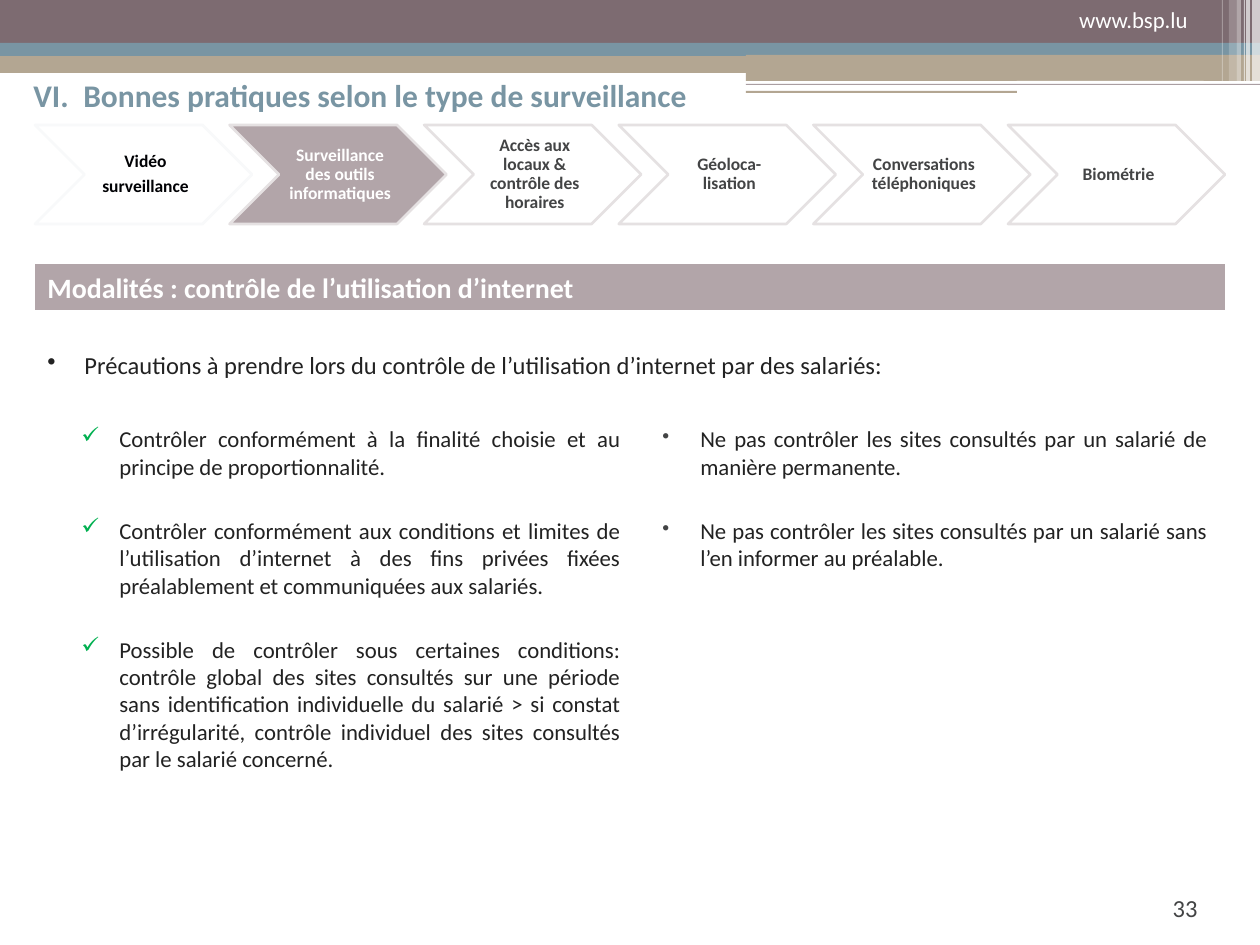
"""Build the slide on precautions when monitoring internet use."""
from lxml.etree import SubElement
from pptx import Presentation
from pptx.dml.color import RGBColor
from pptx.enum.shapes import MSO_SHAPE as Shape
from pptx.enum.text import MSO_ANCHOR as Anchor, PP_ALIGN as Align
from pptx.oxml.ns import qn
from pptx.util import Emu, Pt

SCALE = 914400 / 126
WIDTH, HEIGHT = 1260, 945
COLORS = {
    "plum": "7D6B71", "blue": "7995A3", "tan": "B3A692", "white": "FFFFFF",
    "mauve": "B2A5A9", "pale": "E5E1E2", "faint": "F8F9FA", "black": "000104",
    "gray": "434445", "ink": "222222", "green": "00B050",
}

BANDS = [
    (746, 49, 514, 13, "blue"),
    (0, 54, 907, 19, "tan"),
    (0, 0, WIDTH, 43, "plum"),
    (0, 43, WIDTH, 13, "blue"),
    (746, 55, 514, 26, "tan"),
]
STRIPES = [
    (1252, 8, 86, 65), (1246, 4, 86, 65), (1244, 1, 86, 60),
    (1237, 4, 86, 40), (1229, 8, 81, 20), (1222, 1, 81, 30),
]
STEPS = [
    (["Vidéo", "surveillance"], None, "faint", "black"),
    (["Surveillance des outils informatiques"], "mauve", "pale", "white"),
    (["Accès aux locaux & contrôle des horaires"], None, "pale", "gray"),
    (["Géoloca-lisation"], None, "pale", "gray"),
    (["Conversations téléphoniques"], None, "pale", "gray"),
    (["Biométrie"], None, "pale", "gray"),
]
TITLE = "VI.\tBonnes pratiques selon le type de surveillance"
HEADING = "Modalités : contrôle de l’utilisation d’internet"
INTRO = "Précautions à prendre lors du contrôle de l’utilisation d’internet par des salariés:"
ALLOWED = [
    "Contrôler conformément à la finalité choisie et au principe de proportionnalité.",
    "Contrôler conformément aux conditions et limites de l’utilisation d’internet "
    "à des fins privées fixées préalablement et communiquées aux salariés.",
    "Possible de contrôler sous certaines conditions: contrôle global des sites "
    "consultés sur une période sans identification individuelle du salarié > si constat "
    "d’irrégularité, contrôle individuel des sites consultés par le salarié concerné.",
]
FORBIDDEN = [
    "Ne pas contrôler les sites consultés par un salarié de manière permanente.",
    "Ne pas contrôler les sites consultés par un salarié sans l’en informer au préalable.",
]


def px(value):
    return Emu(round(value * SCALE))


def rgb(name):
    return RGBColor.from_string(COLORS[name])


def add_block(page, at, fill=None, kind=Shape.RECTANGLE, line=None, alpha=None):
    block = page.shapes.add_shape(kind, *map(px, at))
    block.shadow.inherit = False
    if fill:
        block.fill.solid()
        block.fill.fore_color.rgb = rgb(fill)
    else:
        block.fill.background()
    if line:
        block.line.color.rgb = rgb(line)
        block.line.width = Pt(1.5)
    else:
        block.line.fill.background()
    if alpha:
        color = block.fill._xPr.find(qn("a:solidFill"))[0]
        SubElement(color, qn("a:alpha"), val=str(alpha * 1000))
    return block


def add_box(page, at):
    return page.shapes.add_textbox(*map(px, at))


def write(box, texts, size, color, bold=False, align=Align.LEFT, anchor=Anchor.TOP,
          gap=0, spacing=None, bullet=None, bullet_color=None, bullet_size=100,
          indent=(0, 0), tab=None, insets=None):
    frame = box.text_frame
    frame.word_wrap = True
    frame.vertical_anchor = anchor
    if insets:
        (frame.margin_left, frame.margin_top,
         frame.margin_right, frame.margin_bottom) = map(px, insets)
    for index, text in enumerate(texts):
        para = frame.add_paragraph() if index else frame.paragraphs[0]
        props = para._p.get_or_add_pPr()
        if bullet:
            props.set("marL", str(px(indent[0])))
            props.set("indent", str(px(indent[1])))
            tint = SubElement(props, qn("a:buClr"))
            SubElement(tint, qn("a:srgbClr"), val=COLORS[bullet_color or color])
            SubElement(props, qn("a:buSzPct"), val=str(bullet_size * 1000))
            SubElement(props, qn("a:buChar"), char=bullet)
        if tab:
            stops = SubElement(props, qn("a:tabLst"))
            SubElement(stops, qn("a:tab"), pos=str(px(tab)), algn="l")
        para.alignment = align
        if spacing:
            para.line_spacing = spacing
        if index and gap:
            para.space_before = Pt(gap)
        span = para.add_run()
        span.text = text
        span.font.name = "Calibri"
        span.font.size = Pt(size)
        span.font.bold = bold
        span.font.color.rgb = rgb(color)


def add_header(page):
    for *at, fill in BANDS:
        add_block(page, at, fill)
    add_block(page, (1016, 81, 221, 5), "white", kind=Shape.ROUNDED_RECTANGLE)
    for left, width, height, alpha in STRIPES:
        add_block(page, (left, 0, width, height), "white", alpha=alpha)
    add_block(page, (746, 84, 514, 1), "plum", alpha=65)
    add_block(page, (746, 91, 271, 2), "tan")


def add_steps(page, left=35, top=125, total=1190, width=217, height=99):
    pitch = (total - width) / (len(STEPS) - 1)
    for index, (texts, fill, line, color) in enumerate(STEPS):
        at = (left + pitch * index, top, width, height)
        step = add_block(page, at, fill, kind=Shape.CHEVRON, line=line)
        write(step, texts, 10, color, bold=True, align=Align.CENTER,
              anchor=Anchor.MIDDLE, gap=3.5, spacing=0.9, insets=(5, 1, 1, 1))


def main():
    deck = Presentation()
    deck.slide_width, deck.slide_height = px(WIDTH), px(HEIGHT)
    page = deck.slides.add_slide(deck.slide_layouts[6])
    add_header(page)
    write(add_box(page, (1027, 887, 183, 58)), ["33"], 14, "gray", align=Align.RIGHT)
    write(add_box(page, (1017, 0, 183, 63)), ["www.bsp.lu"], 13, "white", align=Align.RIGHT)
    add_steps(page)
    write(add_block(page, (35, 264, 1190, 46), "mauve"), [HEADING], 16, "white",
          bold=True, anchor=Anchor.MIDDLE)
    write(add_box(page, (21, 0, 1223, 190)), [TITLE], 18, "blue", bold=True,
          anchor=Anchor.MIDDLE, tab=50)
    write(add_box(page, (35, 344, 1190, 43)), [INTRO], 14, "ink",
          bullet="•", indent=(37, -37))
    write(add_box(page, (57, 419, 575, 430)), ALLOWED, 13, "ink", align=Align.JUSTIFY,
          gap=21, bullet="✓", bullet_color="green", indent=(50, -38))
    write(add_box(page, (614, 419, 605, 430)), FORBIDDEN, 13, "ink", align=Align.JUSTIFY,
          gap=21, bullet="•", bullet_color="gray", bullet_size=90, indent=(74, -38))
    deck.save("out.pptx")


if __name__ == "__main__":
    main()
